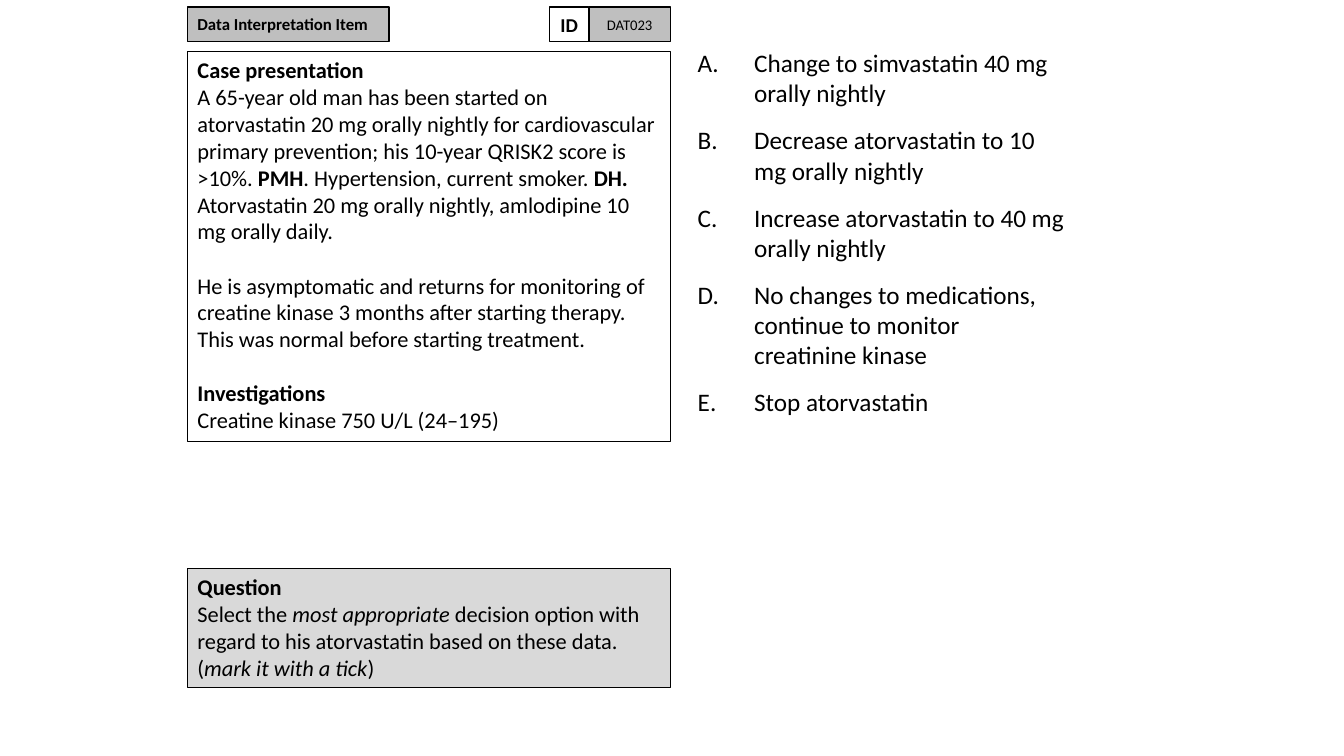
from lxml.etree import SubElement
from pptx import Presentation
from pptx.dml.color import RGBColor
from pptx.enum.shapes import MSO_SHAPE
from pptx.enum.text import MSO_ANCHOR, MSO_AUTO_SIZE, PP_ALIGN
from pptx.oxml.ns import qn
from pptx.util import Inches, Pt

BLACK = RGBColor(0x00, 0x00, 0x00)
LABEL_GRAY = RGBColor(0xBF, 0xBF, 0xBF)
QUESTION_GRAY = RGBColor(0xD9, 0xD9, 0xD9)

BOLD = {"bold": True}
ITALIC = {"italic": True}
PLAIN = {}

LEFT, COLUMN_WIDTH = 1.86, 4.79
LABEL_TOP, LABEL_HEIGHT = 0.07, 0.34
SECTION_GAP = 19.5  # points, one line of 16 pt text

# Each paragraph is its space before and its runs.
CASE = [
    (0, [("Case presentation", BOLD)]),
    (0, [
        ("A 65-year old man has been started on atorvastatin 20 mg orally nightly for "
         "cardiovascular primary prevention; his 10-year QRISK2 score is >10%. ", PLAIN),
        ("PMH", BOLD),
        (". Hypertension, current smoker. ", PLAIN),
        ("DH. ", BOLD),
        ("Atorvastatin 20 mg orally nightly, amlodipine 10 mg orally daily.", PLAIN),
    ]),
    (SECTION_GAP, [
        ("He is asymptomatic and returns for monitoring of creatine kinase 3 months after "
         "starting therapy. This was normal before starting treatment.", PLAIN),
    ]),
    (SECTION_GAP, [("Investigations", BOLD)]),
    (0, [("Creatine kinase 750 U/L (24–195)", PLAIN)]),
]
QUESTION = [
    (0, [("Question", BOLD)]),
    (0, [
        ("Select the ", PLAIN),
        ("most appropriate ", ITALIC),
        ("decision option with regard to his atorvastatin based on these data.", PLAIN),
    ]),
    (0, [("(", PLAIN), ("mark it with a tick", ITALIC), (")", PLAIN)]),
]
OPTIONS = [
    "Change to simvastatin 40 mg orally nightly",
    "Decrease atorvastatin to 10 mg orally nightly",
    "Increase atorvastatin to 40 mg orally nightly",
    "No changes to medications, continue to monitor creatinine kinase",
    "Stop atorvastatin",
]


def add_run(paragraph, text, size, style):
    run = paragraph.add_run()
    run.text = text
    run.font.color.rgb = BLACK
    font_format = {"name": "Calibri", "size": Pt(size), "bold": False, "italic": False}
    for attribute, value in (font_format | style).items():
        setattr(run.font, attribute, value)


def fill_paragraphs(text_frame, paragraphs, size, alignment=PP_ALIGN.LEFT):
    for index, (space_before, runs) in enumerate(paragraphs):
        paragraph = text_frame.add_paragraph() if index else text_frame.paragraphs[0]
        paragraph.alignment = alignment
        paragraph.space_before = Pt(space_before)
        for text, style in runs:
            add_run(paragraph, text, size, style)


def add_box(slide, box, fill=None, line_width=0.75, anchor=MSO_ANCHOR.TOP):
    """Add an outlined rectangle and return its text frame."""
    shape = slide.shapes.add_shape(MSO_SHAPE.RECTANGLE, *map(Inches, box))
    shape.shadow.inherit = False
    if fill is None:
        shape.fill.background()
    else:
        shape.fill.solid()
        shape.fill.fore_color.rgb = fill
    shape.line.color.rgb = BLACK
    shape.line.width = Pt(line_width)
    shape.text_frame.word_wrap = True
    shape.text_frame.vertical_anchor = anchor
    return shape.text_frame


def add_labels(slide, left, top, width, height):
    """Put the item type at the left edge and the ID pair at the right edge."""
    type_width, code_width, id_width = 2, 0.81, 0.39
    code_left = left + width - code_width
    labels = [
        ("Data Interpretation Item", left, type_width, LABEL_GRAY, 12, BOLD, PP_ALIGN.LEFT),
        ("DAT023", code_left, code_width, LABEL_GRAY, 10.5, PLAIN, PP_ALIGN.CENTER),
        ("ID", code_left - id_width, id_width, None, 14, BOLD, PP_ALIGN.CENTER),
    ]
    for text, label_left, label_width, fill, size, style, alignment in labels:
        box = (label_left, top, label_width, height)
        text_frame = add_box(slide, box, fill, 1, MSO_ANCHOR.MIDDLE)
        fill_paragraphs(text_frame, [(0, [(text, style)])], size, alignment)


def add_panel(slide, box, paragraphs, fill=None):
    fill_paragraphs(add_box(slide, box, fill), paragraphs, 16)


def number_with_letters(paragraph, indent):
    properties = paragraph._p.get_or_add_pPr()
    properties.set("marL", str(Inches(indent)))
    properties.set("indent", str(-Inches(indent)))
    SubElement(properties, qn("a:buFont"), typeface="Calibri")
    SubElement(properties, qn("a:buAutoNum"), type="alphaUcPeriod")


def place_options(placeholder, box):
    for attribute, value in zip(("left", "top", "width", "height"), box):
        setattr(placeholder, attribute, Inches(value))
    text_frame = placeholder.text_frame
    text_frame.word_wrap = True
    text_frame.auto_size = MSO_AUTO_SIZE.NONE
    fill_paragraphs(text_frame, [(12, [(option, PLAIN)]) for option in OPTIONS], 18)
    for paragraph in text_frame.paragraphs:
        number_with_letters(paragraph, 0.56)


def main():
    presentation = Presentation()
    presentation.slide_width = Inches(13.33)
    presentation.slide_height = Inches(7.5)
    slide = presentation.slides.add_slide(presentation.slide_layouts.get_by_name("Title and Content"))
    title = slide.shapes.title.element
    title.getparent().remove(title)

    place_options(slide.placeholders[1], (6.82, 0.42, 3.86, 6.28))
    add_labels(slide, LEFT, LABEL_TOP, COLUMN_WIDTH, LABEL_HEIGHT)
    add_panel(slide, (LEFT, 0.51, COLUMN_WIDTH, 3.87), CASE)
    add_panel(slide, (LEFT, 5.64, COLUMN_WIDTH, 1.18), QUESTION, QUESTION_GRAY)
    presentation.save("out.pptx")


if __name__ == "__main__":
    main()
